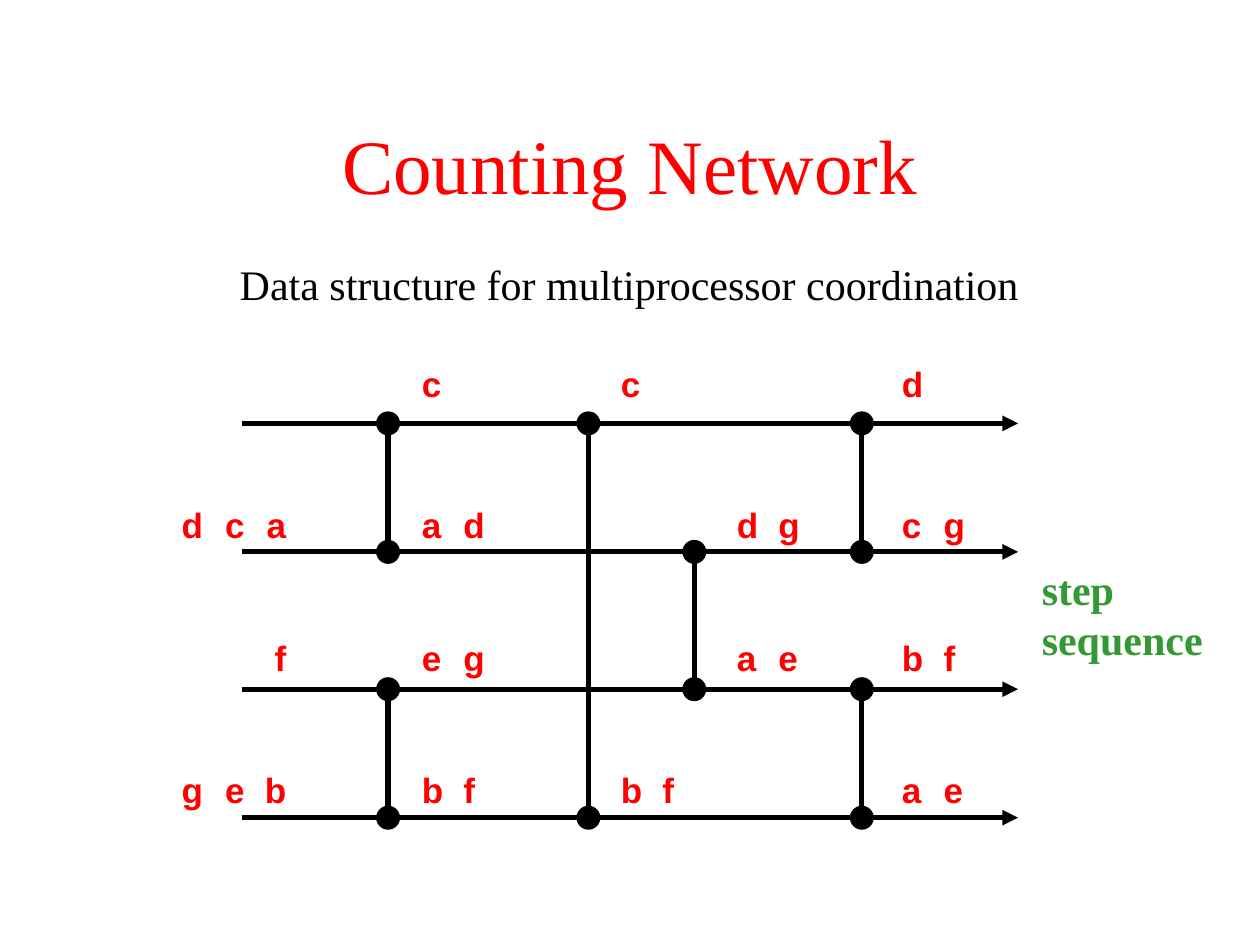
from lxml.etree import SubElement
from pptx import Presentation
from pptx.dml.color import RGBColor
from pptx.enum.shapes import MSO_CONNECTOR, MSO_SHAPE
from pptx.enum.text import MSO_ANCHOR, PP_ALIGN
from pptx.oxml.ns import qn
from pptx.util import Inches, Pt

BLACK, RED, GREEN = "000000", "FF0000", "339933"
SERIF, SANS = "Times New Roman", "Arial"

WIRES = [3.36, 4.38, 5.47, 6.49]
WIRE_START, WIRE_END = 1.92, 8.08
DOT = 0.18

# Balancers: x, upper wire, lower wire
BALANCERS = [(3.08, 0, 1), (3.08, 2, 3), (4.67, 0, 3), (5.51, 1, 2),
             (6.84, 0, 1), (6.84, 2, 3)]

# Tokens on each wire, by stage
TOKEN_TOPS = [2.83, 3.95, 5, 6.05]
TOKEN_WIDTH, TOKEN_STEP = 0.37, 0.33
INPUT_LEFT = 2.0
INPUTS = ["", "dca", "f", "geb"]
STAGES = [(3.25, ["c", "ad", "eg", "bf"]),
          (4.83, ["c", "", "", "bf"]),
          (5.75, ["", "dg", "ae", ""]),
          (7.06, ["d", "cg", "bf", "ae"])]


def color(hex_value):
    return RGBColor.from_string(hex_value)


def add_text(slide, text, box, size, font, hex_value, bold=False,
             align=PP_ALIGN.LEFT, anchor=MSO_ANCHOR.TOP, before=0):
    frame = slide.shapes.add_textbox(*map(Inches, box)).text_frame
    frame.word_wrap = True
    frame.vertical_anchor = anchor
    frame.text = text
    paragraph = frame.paragraphs[0]
    paragraph.alignment = align
    paragraph.space_before = Pt(before)
    run_font = paragraph.runs[0].font
    run_font.name, run_font.size, run_font.bold = font, Pt(size), bold
    run_font.color.rgb = color(hex_value)


def add_line(slide, x1, y1, x2, y2, arrow=False):
    line = slide.shapes.add_connector(
        MSO_CONNECTOR.STRAIGHT, *map(Inches, (x1, y1, x2, y2)))
    line.line.color.rgb = color(BLACK)
    line.line.width = Pt(3)
    if arrow:
        SubElement(line.line._get_or_add_ln(), qn("a:tailEnd"), type="triangle")
    SubElement(line._element.spPr, qn("a:effectLst"))


def add_dot(slide, x, y):
    dot = slide.shapes.add_shape(
        MSO_SHAPE.OVAL, Inches(x - DOT / 2), Inches(y - DOT / 2),
        Inches(DOT), Inches(DOT))
    dot.shadow.inherit = False
    dot.fill.solid()
    dot.fill.fore_color.rgb = color(BLACK)
    dot.line.color.rgb = color(BLACK)
    dot.line.width = Pt(0.75)


def add_balancer(slide, x, upper, lower):
    ends = WIRES[upper], WIRES[lower]
    add_line(slide, x, ends[0], x, ends[1])
    for y in ends:
        add_dot(slide, x, y)


def add_tokens(slide, letters, left, top, align=PP_ALIGN.LEFT):
    for i, letter in enumerate(letters):
        box = (left + i * TOKEN_STEP, top, TOKEN_WIDTH, 0.43)
        add_text(slide, letter, box, 20, SANS, RED, bold=True, align=align)


def main():
    prs = Presentation()
    prs.slide_width, prs.slide_height = Inches(10), Inches(7.5)
    slide = prs.slides.add_slide(prs.slide_layouts[6])

    # Headings
    add_text(slide, "Counting Network", (0.75, 0.67, 8.5, 1.25), 44, SERIF, RED,
             align=PP_ALIGN.CENTER, anchor=MSO_ANCHOR.MIDDLE)
    add_text(slide, "Data structure for multiprocessor coordination",
             (-0.17, 2, 10.33, 0.75), 24, SERIF, BLACK,
             align=PP_ALIGN.CENTER, before=4.8)

    # Network
    for y in WIRES:
        add_line(slide, WIRE_START, y, WIRE_END, y, arrow=True)
    for balancer in BALANCERS:
        add_balancer(slide, *balancer)

    # Input tokens end at the same place, later ones start at the same place
    for letters, top in zip(INPUTS, TOKEN_TOPS):
        first_left = INPUT_LEFT - (len(letters) - 1) * TOKEN_STEP
        add_tokens(slide, letters, first_left, top, PP_ALIGN.RIGHT)
    for left, rows in STAGES:
        for letters, top in zip(rows, TOKEN_TOPS):
            add_tokens(slide, letters, left, top)

    # Output label
    add_text(slide, "step sequence", (8.17, 4.42, 1.5, 0.9), 24, SERIF, GREEN,
             bold=True)

    prs.save("out.pptx")


if __name__ == "__main__":
    main()
